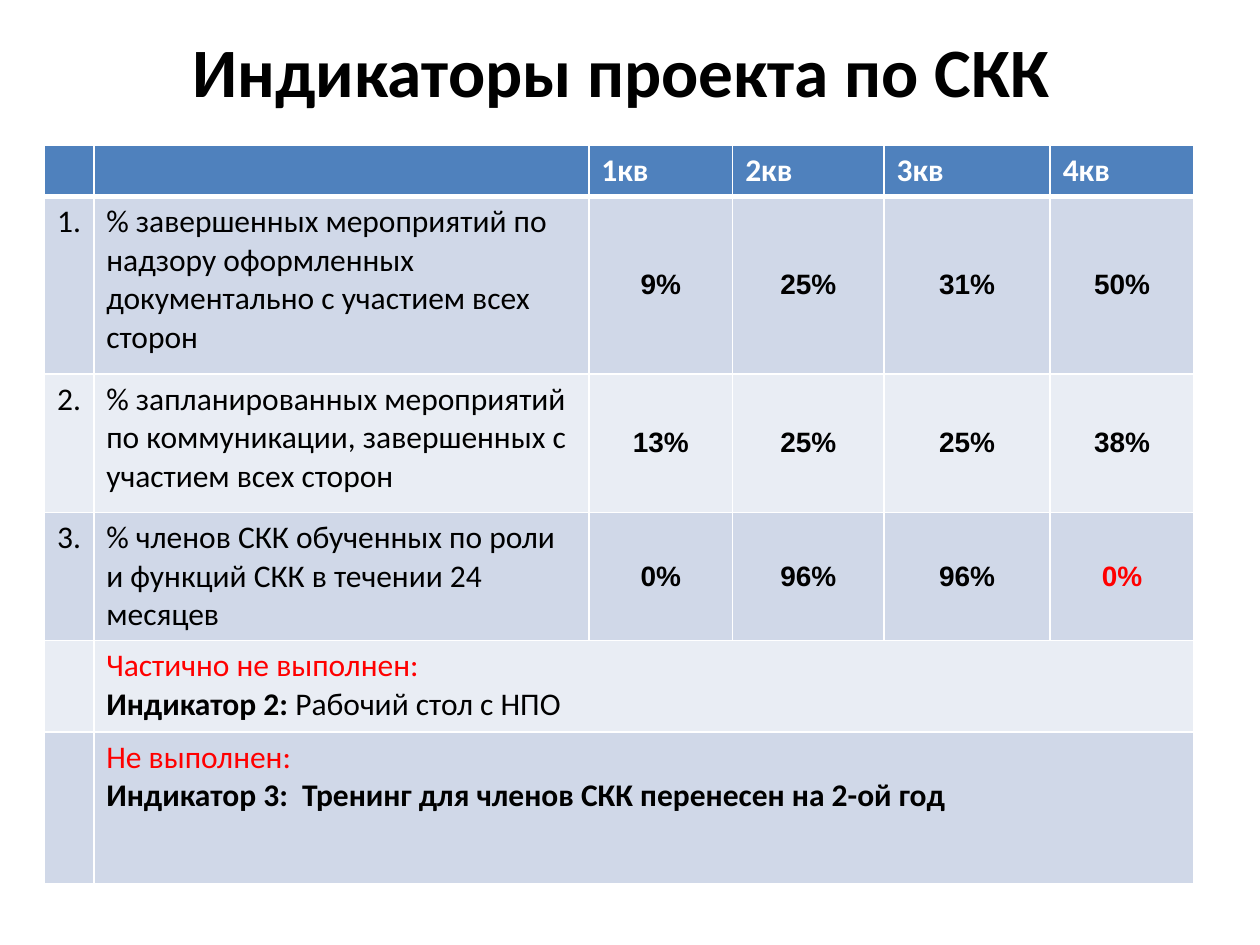
import pptx
import pptx.dml.color
import pptx.enum.text
import pptx.oxml
import pptx.oxml.ns
import pptx.util
from pptx.dml.color import RGBColor
from pptx.util import Cm

BLACK = RGBColor(0x00, 0x00, 0x00)
WHITE = RGBColor(0xFF, 0xFF, 0xFF)
RED = RGBColor(0xFF, 0x00, 0x00)
HEADER_BLUE = RGBColor(0x4F, 0x81, 0xBD)
BAND_DARK = RGBColor(0xD0, 0xD8, 0xE8)
BAND_LIGHT = RGBColor(0xE9, 0xED, 0xF4)

CENTER = pptx.enum.text.PP_ALIGN.CENTER
MIDDLE = pptx.enum.text.MSO_ANCHOR.MIDDLE

COLUMN_WIDTHS = [0.99, 9.98, 2.9, 3.05, 3.35, 2.9]
ROW_HEIGHTS = [0.94, 3.58, 2.79, 2.49, 1.85, 3.05]

QUARTERS = ["1кв", "2кв", "3кв", "4кв"]
INDICATORS = [
    ("% завершенных мероприятий по надзору оформленных документально с участием всех сторон",
     ["9%", "25%", "31%", "50%"]),
    ("% запланированных мероприятий по коммуникации, завершенных с участием всех сторон",
     ["13%", "25%", "25%", "38%"]),
    ("% членов СКК обученных по роли и функций СКК в течении 24 месяцев",
     ["0%", "96%", "96%", "0%"]),
]
# Each note is a list of paragraphs made of (text, colour, bold) runs
NOTES = [
    [[("Частично не выполнен:", RED, False)],
     [("Индикатор 2: ", BLACK, True), ("Рабочий стол с НПО", BLACK, False)]],
    [[("Не выполнен:", RED, False)],
     [("Индикатор 3:  Тренинг для членов СКК перенесен на 2-ой год", BLACK, True)]],
]


class SlideBuilder:
    text_font = "Calibri"
    value_font = "Arial"

    def __init__(self, slide):
        self.slide = slide

    def add_run(self, paragraph, text, color=BLACK, bold=False, size=18, font=text_font):
        run = paragraph.add_run()
        run.text = text
        run.font.name = font
        run.font.size = pptx.util.Pt(size)
        run.font.bold = bold
        run.font.color.rgb = color

    def add_title(self, text, left, top, width, height):
        title = self.slide.shapes.title
        title.left, title.top, title.width, title.height = map(Cm, (left, top, width, height))
        title.text_frame.vertical_anchor = MIDDLE
        paragraph = title.text_frame.paragraphs[0]
        paragraph.alignment = CENTER
        self.add_run(paragraph, text, bold=True, size=39.6)

    def add_table(self, left, top, column_widths, row_heights):
        frame = self.slide.shapes.add_table(
            len(row_heights), len(column_widths), Cm(left), Cm(top),
            Cm(sum(column_widths)), Cm(sum(row_heights)))
        table = frame.table
        for column, width in zip(table.columns, column_widths):
            column.width = Cm(width)
        for row, height in zip(table.rows, row_heights):
            row.height = Cm(height)
        for index, row in enumerate(table.rows):
            fill = HEADER_BLUE if index == 0 else (BAND_LIGHT, BAND_DARK)[index % 2]
            for cell in row.cells:
                # The line under the header is thicker than the others
                self.format_cell(cell, fill, top=3 if index == 1 else 1,
                                 bottom=3 if index == 0 else 1)
        return table

    def format_cell(self, cell, fill, top, bottom):
        properties = cell._tc.get_or_add_tcPr()
        for side, points in (("L", 1), ("R", 1), ("T", top), ("B", bottom)):
            properties.append(pptx.oxml.parse_xml(
                f'<a:ln{side} {pptx.oxml.ns.nsdecls("a")} w="{pptx.util.Pt(points)}">'
                f'<a:solidFill><a:srgbClr val="{WHITE}"/></a:solidFill></a:ln{side}>'))
        cell.fill.solid()
        cell.fill.fore_color.rgb = fill

    def write_text(self, cell, text, color=BLACK, bold=False):
        self.add_run(cell.text_frame.paragraphs[0], text, color, bold)

    def write_value(self, cell, text, color):
        cell.vertical_anchor = MIDDLE
        cell.margin_left = cell.margin_right = cell.margin_top = cell.margin_bottom = 0
        paragraph = cell.text_frame.paragraphs[0]
        paragraph.alignment = CENTER
        self.add_run(paragraph, text, color, bold=True, size=16, font=self.value_font)

    def write_note(self, cell, lines):
        for index, runs in enumerate(lines):
            text_frame = cell.text_frame
            paragraph = text_frame.add_paragraph() if index else text_frame.paragraphs[0]
            for text, color, bold in runs:
                self.add_run(paragraph, text, color, bold)


def main():
    presentation = pptx.Presentation()
    presentation.slide_width, presentation.slide_height = Cm(25.4), Cm(19.05)
    slide = presentation.slides.add_slide(presentation.slide_layouts[5])
    builder = SlideBuilder(slide)

    # Title
    builder.add_title("Индикаторы проекта по СКК", 1.09, 0.53, 22.86, 1.75)

    # Table header
    table = builder.add_table(0.9, 2.93, COLUMN_WIDTHS, ROW_HEIGHTS)
    for column, quarter in enumerate(QUARTERS, start=2):
        builder.write_text(table.cell(0, column), quarter, WHITE, bold=True)

    # Indicators by quarter
    for row, (name, values) in enumerate(INDICATORS, start=1):
        builder.write_text(table.cell(row, 0), f"{row}.")
        builder.write_text(table.cell(row, 1), name)
        for column, value in enumerate(values, start=2):
            missed = (row, column) == (3, 5)
            builder.write_value(table.cell(row, column), value, RED if missed else BLACK)

    # Notes across the remaining columns
    for row, lines in enumerate(NOTES, start=len(INDICATORS) + 1):
        cell = table.cell(row, 1)
        cell.merge(table.cell(row, len(COLUMN_WIDTHS) - 1))
        builder.write_note(cell, lines)

    presentation.save("out.pptx")


if __name__ == "__main__":
    main()
